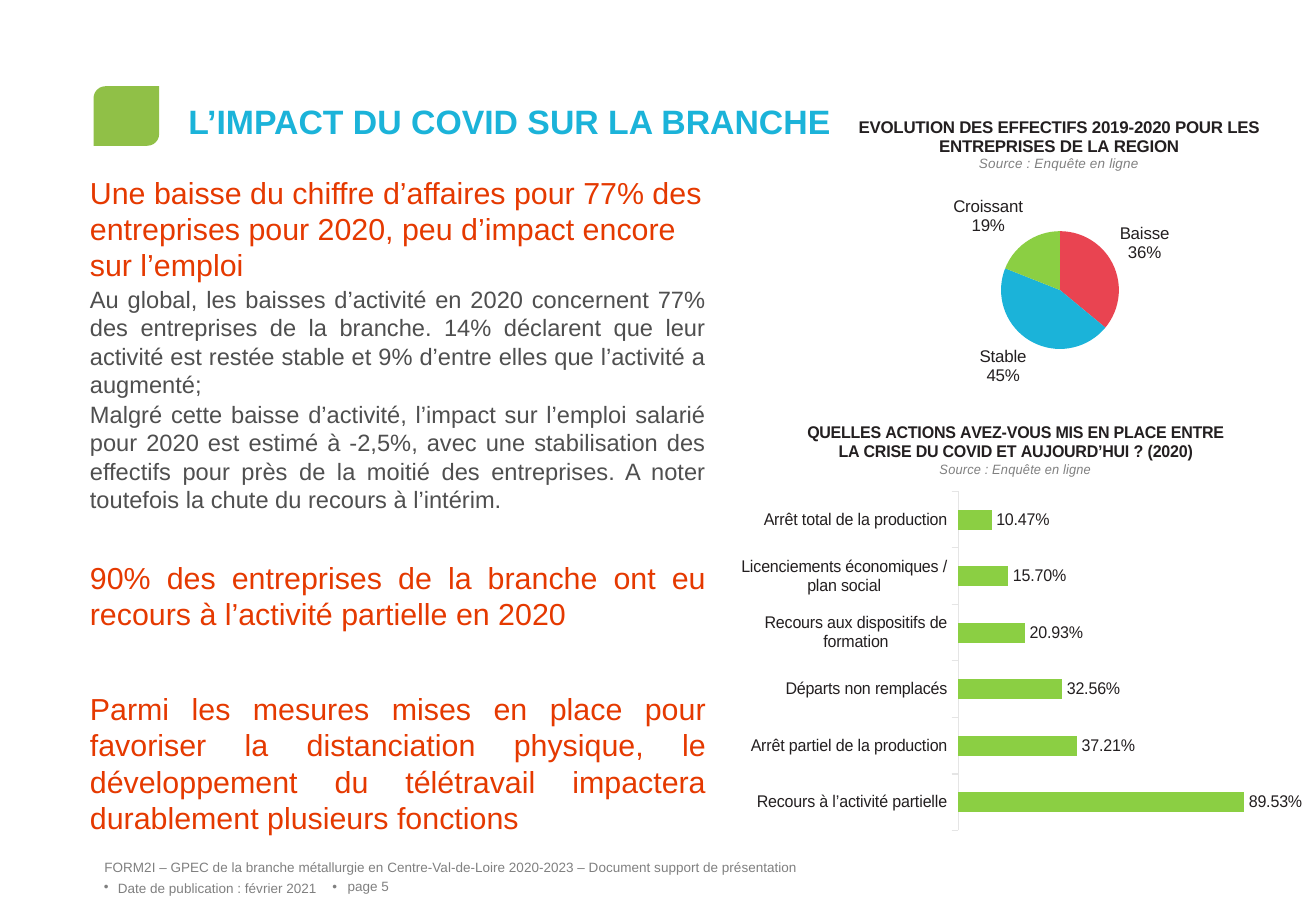
"""Build the slide on the impact of Covid on the branch, with its two survey charts."""
from lxml import etree
from pptx import Presentation
from pptx.chart.data import CategoryChartData
from pptx.dml.color import RGBColor
from pptx.enum.chart import XL_CHART_TYPE as ChartType, XL_LABEL_POSITION as LabelPosition
from pptx.enum.chart import XL_TICK_MARK as TickMark
from pptx.enum.shapes import MSO_SHAPE as Preset
from pptx.enum.text import MSO_ANCHOR as Anchor, PP_ALIGN as Align
from pptx.oxml.ns import qn
from pptx.util import Inches, Pt

BLUE = RGBColor(0x1B, 0xB3, 0xD9)
GREEN = RGBColor(0x8B, 0xCF, 0x43)
LOGO_GREEN = RGBColor(0x90, 0xC0, 0x47)
RED = RGBColor(0xE9, 0x44, 0x51)
ORANGE = RGBColor(0xE5, 0x39, 0x00)
DARK = RGBColor(0x23, 0x1F, 0x20)
BODY_GRAY = RGBColor(0x4F, 0x4F, 0x4F)
GRAY = RGBColor(0x80, 0x80, 0x80)
AXIS_GRAY = RGBColor(0xE5, 0xE5, 0xE5)


def style_font(font, size, color, bold=False, italic=False):
    values = {"name": "Arial", "size": Pt(size), "bold": bold, "italic": italic}
    for name, value in values.items():
        setattr(font, name, value)
    font.color.rgb = color


def make_layout(**values):
    layout = etree.Element(qn("c:layout"))
    manual = etree.SubElement(layout, qn("c:manualLayout"))
    for name, value in values.items():
        etree.SubElement(manual, qn(f"c:{name}")).set("val", str(value))
    return layout


presentation = Presentation()
presentation.slide_width = Inches(10.83)
presentation.slide_height = Inches(7.5)
slide = presentation.slides.add_slide(presentation.slide_layouts[6])

logo = slide.shapes.add_shape(Preset.ROUND_2_DIAG_RECTANGLE,
                              Inches(0.77), Inches(0.71), Inches(0.54), Inches(0.49))
logo.shadow.inherit = False
logo.adjustments[0] = 0.2
logo.fill.solid()
logo.fill.fore_color.rgb = LOGO_GREEN
logo.line.fill.background()

footer = [
    ("page 5", 2.86, 7.23, 1.08, Align.LEFT, Anchor.TOP),
    ("Date de publication : février 2021", 0.97, 7.25, 1.87, Align.LEFT, Anchor.MIDDLE),
    ("FORM2I – GPEC de la branche métallurgie en Centre-Val-de-Loire 2020-2023 – "
     "Document support de présentation", 0.86, 7.07, 7.87, Align.LEFT, Anchor.MIDDLE),
    ("•", 0.77, 7.23, 0.21, Align.CENTER, Anchor.MIDDLE),
    ("•", 2.65, 7.23, 0.21, Align.CENTER, Anchor.MIDDLE),
]
body = [
    ("Une baisse du chiffre d’affaires pour 77% des entreprises pour 2020, peu d’impact "
     "encore sur l’emploi", 18, ORANGE, Align.LEFT, 0),
    ("Au global, les baisses d’activité en 2020 concernent 77% des entreprises de la branche. "
     "14% déclarent que leur activité est restée stable et 9% d’entre elles que l’activité a "
     "augmenté;", 14, BODY_GRAY, Align.JUSTIFY, 0),
    ("Malgré cette baisse d’activité, l’impact sur l’emploi salarié pour 2020 est estimé à "
     "-2,5%, avec une stabilisation des effectifs pour près de la moitié des entreprises. "
     "A noter toutefois la chute du recours à l’intérim.", 14, BODY_GRAY, Align.JUSTIFY, 0),
    ("90% des entreprises de la branche ont eu recours à l’activité partielle en 2020",
     18, ORANGE, Align.JUSTIFY, 26),
    ("Parmi les mesures mises en place pour favoriser la distanciation physique, le "
     "développement du télétravail impactera durablement plusieurs fonctions",
     18, ORANGE, Align.JUSTIFY, 33.5),
]
boxes = [(left, top, width, 0.13, anchor, [(text, 8, GRAY, align, 0)])
         for text, left, top, width, align, anchor in footer]
boxes += [
    (1.55, 0.73, 8.51, 0.43, Anchor.BOTTOM,
     [("L’IMPACT DU COVID SUR LA BRANCHE", 20, BLUE, Align.LEFT, 0)]),
    (0.74, 1.43, 5.07, 5.55, Anchor.TOP, body),
]
for left, top, width, height, anchor, paragraphs in boxes:
    shape = slide.shapes.add_textbox(Inches(left), Inches(top), Inches(width), Inches(height))
    frame = shape.text_frame
    frame_format = {"word_wrap": True, "vertical_anchor": anchor, "margin_left": 0,
                    "margin_top": 0, "margin_right": 0, "margin_bottom": 0}
    for name, value in frame_format.items():
        setattr(frame, name, value)
    for index, (text, size, color, align, space_before) in enumerate(paragraphs):
        paragraph = frame.add_paragraph() if index else frame.paragraphs[0]
        paragraph.text = text
        paragraph_format = {"alignment": align, "space_before": Pt(space_before),
                            "space_after": Pt(1 if paragraphs is body else 0)}
        for name, value in paragraph_format.items():
            setattr(paragraph, name, value)
        style_font(paragraph.font, size, color, bold=size == 20)

actions = {
    "Recours à l’activité partielle": 0.8953,
    "Arrêt partiel de la production": 0.3721,
    "Départs non remplacés": 0.3256,
    "Recours aux dispositifs de formation": 0.2093,
    "Licenciements économiques / plan social": 0.157,
    "Arrêt total de la production": 0.1047,
}
staffing = {"Baisse": 36, "Stable": 45, "Croissant": 19}
chart_specs = [
    (ChartType.BAR_CLUSTERED, 6.1, 3.33, 3.58, actions, "0.00%",
     "QUELLES ACTIONS AVEZ-VOUS MIS EN PLACE ENTRE LA CRISE DU COVID ET AUJOURD’HUI ? (2020)",
     (0.1, 0.03), (0.39, 0.2, 0.6, 0.78)),
    (ChartType.PIE, 6.39, 0.82, 2.51, staffing, "0%",
     "EVOLUTION DES EFFECTIFS 2019-2020 POUR LES ENTREPRISES DE LA REGION",
     (0.14, 0.04), (0.4, 0.43, 0.21, 0.39)),
]
charts = []
for kind, left, top, height, values, number_format, title, title_at, plot_at in chart_specs:
    data = CategoryChartData()
    data.categories = list(values)
    data.add_series("Series 1", list(values.values()))
    chart = slide.shapes.add_chart(kind, Inches(left), Inches(top),
                                   Inches(4.62), Inches(height), data).chart
    charts.append(chart)
    chart.has_legend = False
    style_font(chart.font, 10, BODY_GRAY)

    title_frame = chart.chart_title.text_frame
    title_frame.text = title
    style_font(title_frame.paragraphs[0].runs[0].font, 10, DARK, bold=True)
    source = title_frame.add_paragraph().add_run()
    source.text = "Source : Enquête en ligne"
    style_font(source.font, 8, GRAY, italic=True)
    title_element = chart.chart_title._element
    plot_area = chart._chartSpace.chart.plotArea
    for element in (title_element, plot_area):
        for layout in element.findall(qn("c:layout")):
            element.remove(layout)
    title_element.find(qn("c:tx")).addnext(
        make_layout(xMode="edge", yMode="edge", x=title_at[0], y=title_at[1]))
    x, y, w, h = plot_at
    plot_area.insert(0, make_layout(layoutTarget="inner", xMode="edge", yMode="edge",
                                    x=x, y=y, w=w, h=h))

    labels = chart.plots[0].series[0].data_labels
    is_pie = kind == ChartType.PIE
    label_format = {"show_value": not is_pie, "show_percentage": is_pie,
                    "show_category_name": is_pie, "number_format": number_format,
                    "number_format_is_linked": False, "position": LabelPosition.OUTSIDE_END}
    for name, value in label_format.items():
        setattr(labels, name, value)
    style_font(labels.font, 10, DARK)

bar_chart, pie_chart = charts
bar_plot = bar_chart.plots[0]
bar_plot.gap_width = 182
bar_plot.vary_by_categories = False
bar_fill = bar_plot.series[0].format.fill
bar_fill.solid()
bar_fill.fore_color.rgb = GREEN
category_axis = bar_chart.category_axis
category_axis.major_tick_mark = TickMark.OUTSIDE
category_axis.format.line.color.rgb = AXIS_GRAY
category_axis.format.line.width = Pt(0.75)
style_font(category_axis.tick_labels.font, 10, DARK)
value_axis_format = {"minimum_scale": 0, "maximum_scale": 1, "major_unit": 0.25,
                     "has_major_gridlines": False, "visible": False}
for name, value in value_axis_format.items():
    setattr(bar_chart.value_axis, name, value)

pie_series = pie_chart.plots[0].series[0]
for index, color in enumerate((RED, BLUE, GREEN)):
    slice_fill = pie_series.points[index].format.fill
    slice_fill.solid()
    slice_fill.fore_color.rgb = color
separator = etree.Element(qn("c:separator"))
separator.text = "\n"
pie_series.data_labels._element.find(qn("c:showBubbleSize")).addnext(separator)

presentation.save("out.pptx")
